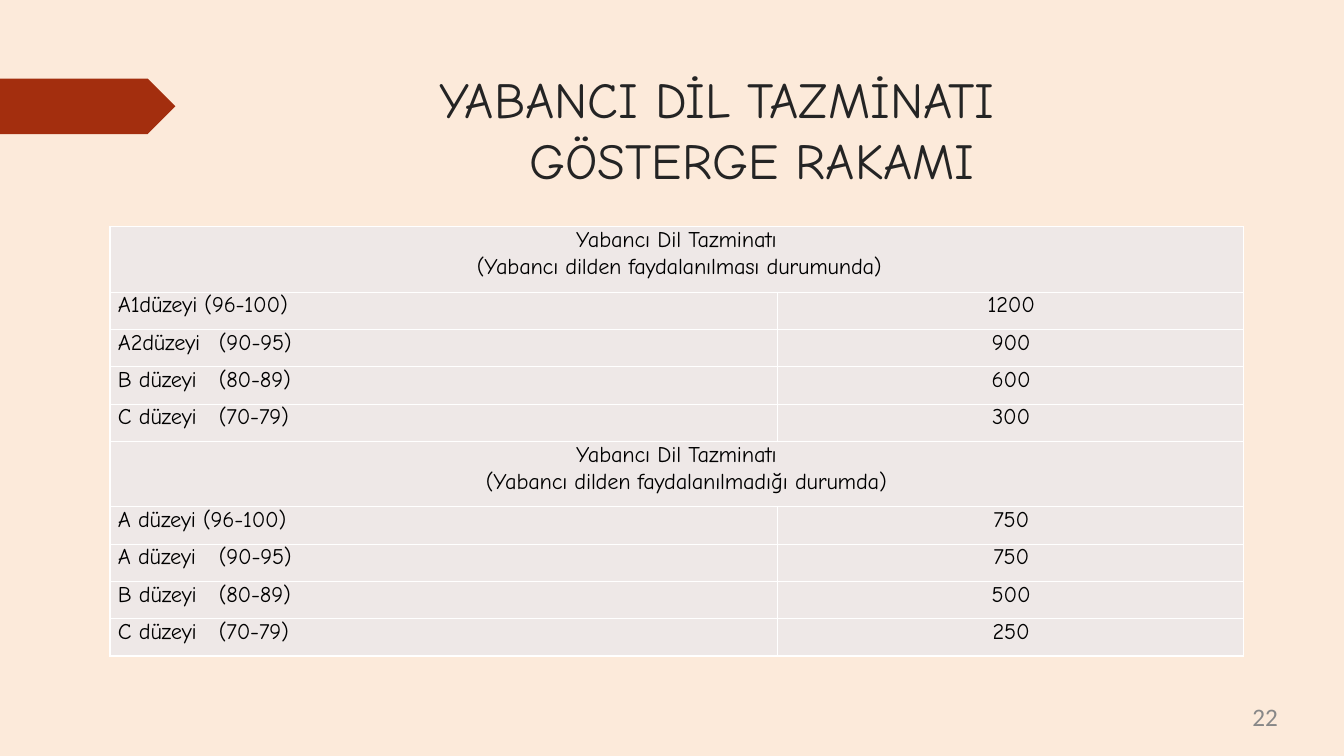
from lxml import etree
from pptx import Presentation
from pptx.dml.color import RGBColor
from pptx.enum.shapes import MSO_SHAPE
from pptx.enum.text import PP_ALIGN
from pptx.oxml.ns import qn
from pptx.util import Inches, Pt

LEFT, MID = PP_ALIGN.LEFT, PP_ALIGN.CENTER
ARROW = MSO_SHAPE.PENTAGON
COLORS = {"back": "FCEADA", "arrow": "A32E0E", "title": "242424",
          "page": "888888", "cell": "EEE8E7", "text": "000000", "rule": "FFFFFF"}
FONT = "Comic Neue"
TITLE = "YABANCI DİL TAZMİNATI GÖSTERGE RAKAMI"
PAGE = "22"
GROUPS = [
    ("Yabancı Dil Tazminatı", "(Yabancı dilden faydalanılması durumunda)", 3.64, 18.6, [
        ("A1düzeyi (96-100)", "1200", None),
        ("A2düzeyi\t(90-95)", "900", 1.18),
        ("B düzeyi\t(80-89)", "600", 1.15),
        ("C düzeyi\t(70-79)", "300", 1.15)]),
    ("Yabancı Dil Tazminatı", "(Yabancı dilden faydalanılmadığı durumda)", 3.73, 18.7, [
        ("A düzeyi (96-100)", "750", None),
        ("A düzeyi\t(90-95)", "750", 1.18),
        ("B düzeyi\t(80-89)", "500", 1.15),
        ("C düzeyi\t(70-79)", "250", 1.15)]),
]
COLS = (6.62, 4.62)
HEAD, ROW = 0.65, 0.37


def color(name):
    """Return the named colour."""
    return RGBColor.from_string(COLORS[name])


def style(para, size, font, tone, align=LEFT, indent=0, first=0, space=0):
    """Format a paragraph and its runs."""
    para.alignment = align
    props = para._p.get_or_add_pPr()
    props.set("marL", str(Inches(indent)))
    props.set("indent", str(Inches(first)))
    for run in para.runs:
        run.font.size = Pt(size)
        run.font.name = font
        run.font.color.rgb = color(tone)
        run._r.get_or_add_rPr().set("spc", str(space))


def add_tab(para, pos):
    """Add a left tab stop."""
    tabs = etree.SubElement(para._p.get_or_add_pPr(), qn("a:tabLst"))
    etree.SubElement(tabs, qn("a:tab"), pos=str(Inches(pos)), algn="l")


def trim(frame):
    """Remove the inner margins."""
    frame.margin_left = frame.margin_right = 0
    frame.margin_top = frame.margin_bottom = 0


def add_text(slide, text, box):
    """Add a wrapping text box and return its paragraph."""
    frame = slide.shapes.add_textbox(*map(Inches, box)).text_frame
    trim(frame)
    frame.word_wrap = True
    frame.text = text
    return frame.paragraphs[0]


def fill_cell(cell, text, align, indent, lead):
    """Write a cell with its borders and fill and return its paragraphs."""
    cell.margin_left = cell.margin_right = 0
    cell.margin_top = cell.margin_bottom = 0
    props = cell._tc.get_or_add_tcPr()
    for side in ("lnL", "lnR", "lnT", "lnB"):
        line = etree.SubElement(props, qn("a:" + side), w=str(Pt(1)))
        solid = etree.SubElement(line, qn("a:solidFill"))
        etree.SubElement(solid, qn("a:srgbClr"), val=COLORS["rule"])
    cell.fill.solid()
    cell.fill.fore_color.rgb = color("cell")
    cell.text_frame.text = text
    paras = cell.text_frame.paragraphs
    for para in paras:
        style(para, 16, FONT, "text", align, indent, space=-10)
    paras[0].line_spacing = Pt(lead)
    return paras


def add_grid(slide):
    """Add the table of allowances."""
    sizes = [size for group in GROUPS for size in [HEAD] + [ROW] * len(group[4])]
    box = (1.09, 2.25, sum(COLS), sum(sizes))
    table = slide.shapes.add_table(len(sizes), len(COLS), *map(Inches, box)).table
    table.first_row = table.horz_banding = False
    for col, width in zip(table.columns, COLS):
        col.width = Inches(width)
    for row, height in zip(table.rows, sizes):
        row.height = Inches(height)
    index = 0
    for head, note, indent, lead, levels in GROUPS:
        table.cell(index, 0).merge(table.cell(index, 1))
        paras = fill_cell(table.cell(index, 0), head + "\n" + note, MID, 0, 18.8)
        style(paras[1], 16, FONT, "text", LEFT, indent, space=-15)
        paras[1].space_before = Pt(0.9)
        for level, value, tab in levels:
            index += 1
            para = fill_cell(table.cell(index, 0), level, LEFT, 0.08, lead)[0]
            if tab:
                add_tab(para, tab)
            fill_cell(table.cell(index, 1), value, MID, 0.02, lead)
        index += 1


def main():
    """Build the slide."""
    deck = Presentation()
    deck.slide_width, deck.slide_height = Inches(13.33), Inches(7.5)
    slide = deck.slides.add_slide(deck.slide_layouts[6])
    slide.background.fill.solid()
    slide.background.fill.fore_color.rgb = color("back")
    arrow = slide.shapes.add_shape(ARROW, *map(Inches, (0, 0.78, 1.74, 0.55)))
    arrow.shadow.inherit = False
    arrow.fill.solid()
    arrow.fill.fore_color.rgb = color("arrow")
    arrow.line.fill.background()
    title = add_text(slide, TITLE, (4.35, 0.68, 6.72, 1.22))
    style(title, 36, FONT, "title", indent=0.9, first=-0.89)
    title.space_before = Pt(1)
    page = add_text(slide, PAGE, (12.39, 7.01, 0.31, 0.28))
    style(page, 18, "Calibri", "page", indent=0.03)
    page.line_spacing = Pt(18.1)
    add_grid(slide)
    deck.save("out.pptx")


if __name__ == "__main__":
    main()
